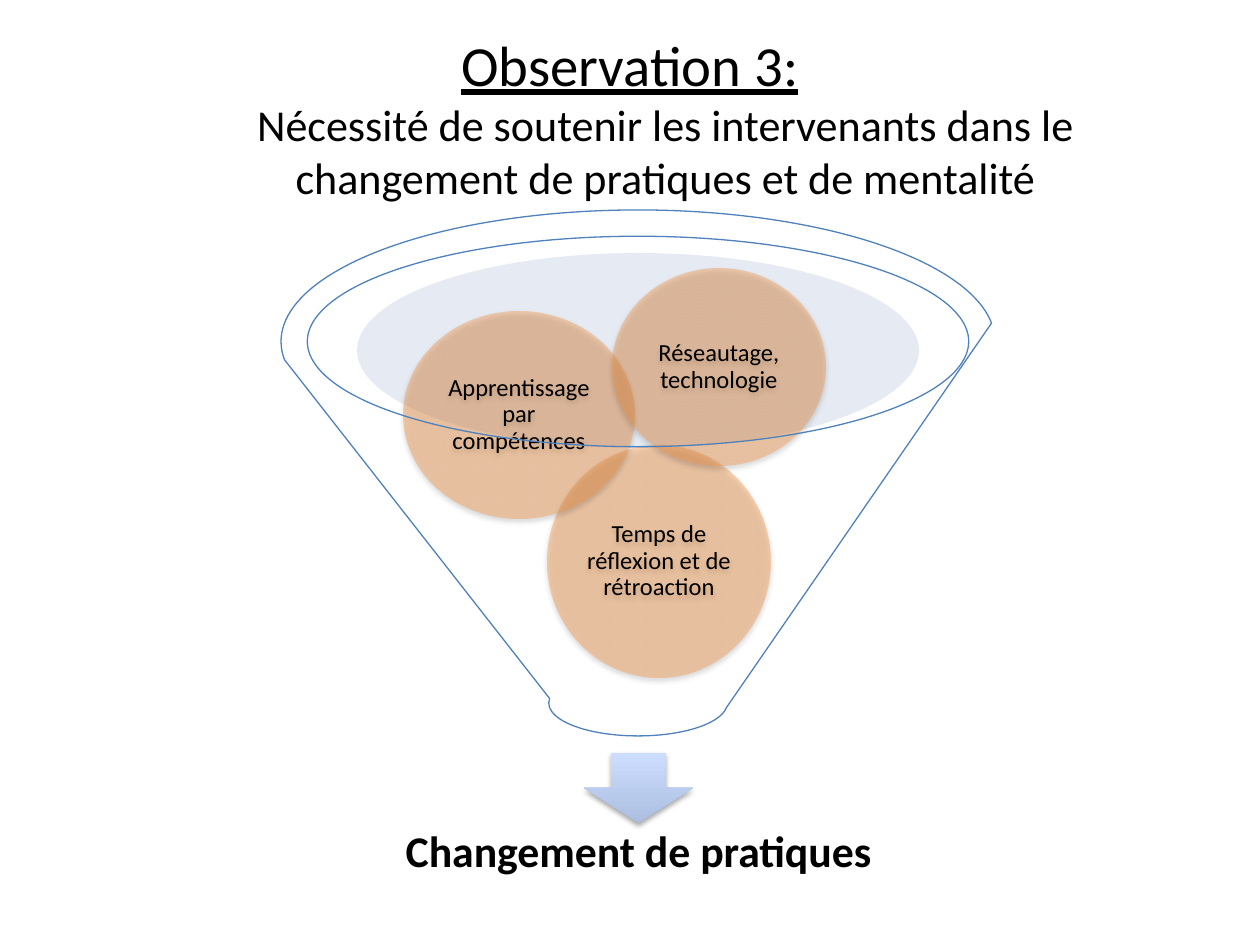
from lxml import etree
from pptx import Presentation
from pptx import util as u
from pptx.dml.color import RGBColor
from pptx.enum import shapes, text
from pptx.oxml.ns import qn

EMU_PER_PX = 914400 / 126
BLACK = RGBColor(0x00, 0x00, 0x00)
ORANGE = RGBColor(0xF7, 0x96, 0x46)
MIST = RGBColor(0xC2, 0xCD, 0xE1)
ARROW_TOP = RGBColor(0xCC, 0xDD, 0xFF)
ARROW_BOTTOM = RGBColor(0xAD, 0xBF, 0xE1)
OUTLINE = RGBColor(0x4F, 0x81, 0xBD)


def px(length):
    return u.Emu(round(length * EMU_PER_PX))


def add_alpha(color, percent):
    etree.SubElement(color, qn("a:alpha"), val=str(percent * 1000))


class FunnelSlide:
    font = "Calibri"

    def __init__(self, slide):
        self.slide = slide

    def shape(self, kind, box):
        """Add a preset shape without fill, line or shadow."""
        shape = self.slide.shapes.add_shape(kind, *map(px, box))
        shape.shadow.inherit = False
        shape.fill.background()
        shape.line.fill.background()
        return shape

    def drop_shadow(self, shape):
        effects = shape._element.spPr.find(qn("a:effectLst"))
        shadow = etree.SubElement(
            effects, qn("a:outerShdw"), blurRad=str(u.Pt(3.1)),
            dist=str(u.Pt(1.8)), dir="5400000", rotWithShape="0")
        add_alpha(etree.SubElement(shadow, qn("a:srgbClr"), val="000000"), 35)

    def caption(self, frame, words, size, inset, bold=False):
        frame.word_wrap = True
        frame.vertical_anchor = text.MSO_ANCHOR.MIDDLE
        frame.margin_left = frame.margin_right = px(inset)
        frame.margin_top = frame.margin_bottom = px(inset)
        paragraph = frame.paragraphs[0]
        paragraph.text = words
        paragraph.alignment = text.PP_ALIGN.CENTER
        paragraph.line_spacing = 0.9
        self.style(paragraph.font, size, bold)

    def style(self, font, size, bold=False):
        font.name = self.font
        font.size = u.Pt(size)
        font.bold = bold
        font.color.rgb = BLACK

    def title(self, heading, subtitle, box, indent):
        frame = self.slide.shapes.add_textbox(*map(px, box)).text_frame
        frame.word_wrap = True
        frame.vertical_anchor = text.MSO_ANCHOR.MIDDLE
        paragraph = frame.paragraphs[0]
        paragraph.alignment = text.PP_ALIGN.CENTER
        properties = paragraph._p.get_or_add_pPr()
        properties.set("marL", str(px(indent)))
        properties.set("indent", str(-px(indent)))
        first = paragraph.add_run()
        first.text = heading
        self.style(first.font, 32.4)
        first.font.underline = True
        paragraph.add_line_break()
        second = paragraph.add_run()
        second.text = subtitle
        self.style(second.font, 25.2)

    def disc(self, box, color):
        """Add a translucent ellipse."""
        disc = self.shape(shapes.MSO_SHAPE.OVAL, box)
        disc.fill.solid()
        disc.fill.fore_color.rgb = color
        add_alpha(disc._element.spPr.find(qn("a:solidFill"))[0], 40)
        return disc

    def ball(self, words, box):
        ball = self.disc(box, ORANGE)
        self.drop_shadow(ball)
        self.caption(ball.text_frame, words, 14, inset=2)

    def arrow(self, box):
        arrow = self.shape(shapes.MSO_SHAPE.DOWN_ARROW, box)
        arrow.fill.gradient()
        arrow.fill.gradient_angle = 90
        for stop, color in zip(arrow.fill.gradient_stops, (ARROW_BOTTOM, ARROW_TOP)):
            stop.color.rgb = color
        self.drop_shadow(arrow)

    def result(self, words, box):
        label = self.slide.shapes.add_textbox(*map(px, box))
        self.caption(label.text_frame, words, 25, inset=24, bold=True)

    def funnel(self, box):
        funnel = self.shape(shapes.MSO_SHAPE.FUNNEL, box)
        funnel.line.color.rgb = OUTLINE
        funnel.line.width = u.Pt(0.75)


def main():
    deck = Presentation()
    deck.slide_width, deck.slide_height = px(1260), px(945)
    page = FunnelSlide(deck.slides.add_slide(deck.slide_layouts[6]))

    page.title(
        "Observation 3:",
        "Nécessité de soutenir les intervenants dans le changement de pratiques et de mentalité",
        (63, 38, 1134, 157), indent=71)
    page.disc((357, 253, 562, 195), MIST)
    page.arrow((584, 753, 109, 70))
    page.result("Changement de pratiques", (377, 788, 523, 131))
    for words, box in (
        ("Temps de réflexion et de rétroaction", (547, 445, 224, 233)),
        ("Apprentissage par compétences", (403, 311, 232, 208)),
        ("Réseautage, technologie", (612, 268, 214, 198)),
    ):
        page.ball(words, box)
    page.funnel((281, 210, 714, 526))
    deck.save("out.pptx")


if __name__ == "__main__":
    main()
